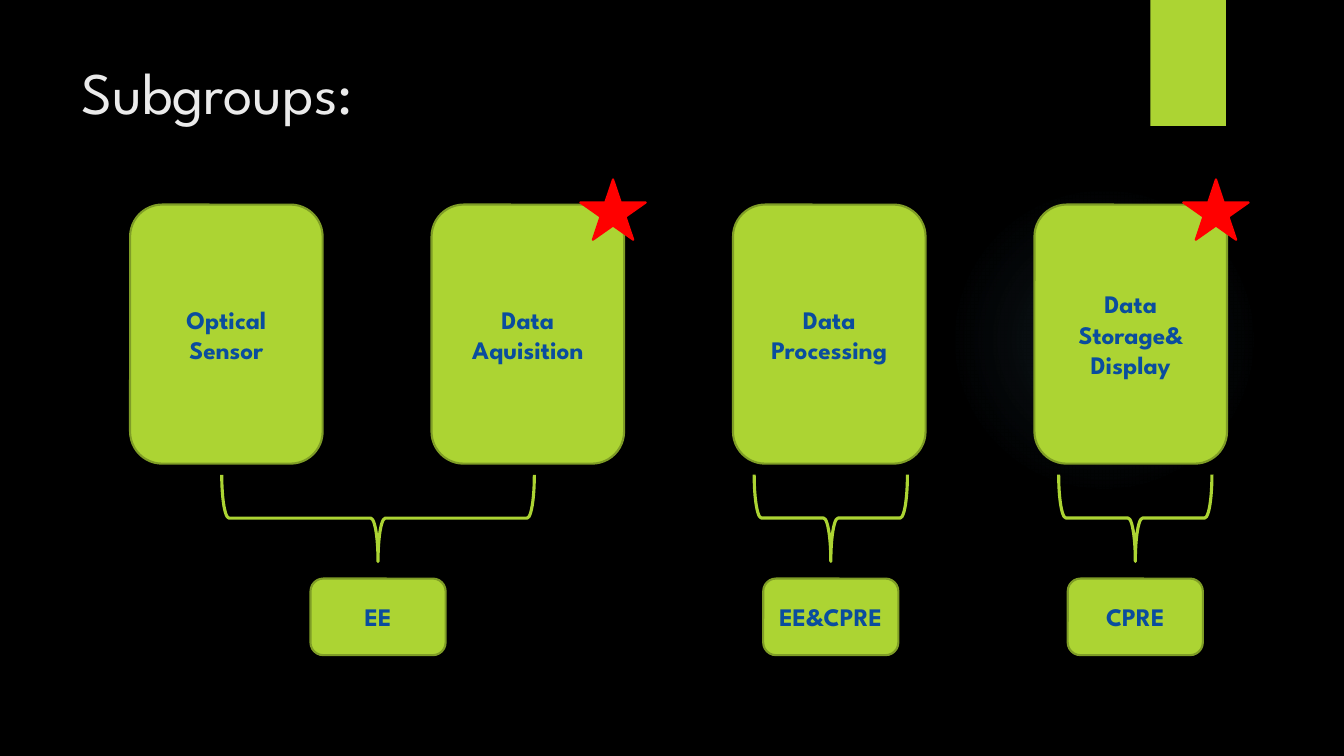
"""Build the slide that shows the project subgroups and their departments."""
from dataclasses import dataclass

from pptx import Presentation
from pptx.dml.color import RGBColor
from pptx.enum.shapes import MSO_SHAPE
from pptx.enum.text import MSO_ANCHOR, PP_ALIGN
from pptx.oxml import parse_xml
from pptx.oxml.ns import nsdecls
from pptx.shapes.autoshape import Shape
from pptx.slide import Slide
from pptx.util import Inches, Pt

RECT, OVAL, ROUNDED = MSO_SHAPE.RECTANGLE, MSO_SHAPE.OVAL, MSO_SHAPE.ROUNDED_RECTANGLE
LEFT_BRACE, RIGHT_BRACE = MSO_SHAPE.LEFT_BRACE, MSO_SHAPE.RIGHT_BRACE
STAR = MSO_SHAPE.STAR_5_POINT
MIDDLE, TOP = MSO_ANCHOR.MIDDLE, MSO_ANCHOR.TOP
CENTER = PP_ALIGN.CENTER

BLACK = RGBColor(0x00, 0x00, 0x00)
LIME = RGBColor(0xAC, 0xD4, 0x33)
OLIVE = RGBColor(0x7F, 0x9D, 0x26)
NAVY = RGBColor(0x0A, 0x4D, 0x9E)
RED = RGBColor(0xFF, 0x00, 0x00)
OFF_WHITE = RGBColor(0xEB, 0xEB, 0xEB)
GLOW_BLUE = RGBColor(0x7A, 0xC4, 0xF0)

FONT = "League Spartan"
TITLE_FONT = {"name": FONT, "size": Pt(42)}
LABEL_FONT = {"name": FONT, "size": Pt(18), "bold": True}
GLOW_STOPS = ((0, 7), (36, 6), (69, 0))

CARD_LEFT, CARD_TOP, CARD_PITCH = 1.29, 2.03, 2.99
CARD_WIDTH, CARD_HEIGHT = 1.91, 2.57
STAR_WIDTH, STAR_HEIGHT, STAR_TOP, STAR_INSET = 0.65, 0.6, 1.78, 0.11
BRACE_DEPTH, BRACE_MIDDLE = 0.86, 5.14
DEPARTMENT_WIDTH, DEPARTMENT_HEIGHT, DEPARTMENT_TOP = 1.34, 0.76, 5.74


@dataclass(frozen=True)
class Subgroup:
    name: str
    starred: bool = False


@dataclass(frozen=True)
class Department:
    name: str
    center: float
    span: float
    brace: MSO_SHAPE = RIGHT_BRACE
    rotation: int = 90


SUBGROUPS = (
    Subgroup("Optical Sensor"),
    Subgroup("Data Aquisition", starred=True),
    Subgroup("Data Processing"),
    Subgroup("Data Storage& Display", starred=True),
)
DEPARTMENTS = (
    Department("EE", 3.75, 3.1, LEFT_BRACE, 270),
    Department("EE&CPRE", 8.24, 1.52),
    Department("CPRE", 11.26, 1.52),
)


def write(box: Shape, text: str, font: dict, color: RGBColor) -> None:
    box.text_frame.word_wrap = True
    paragraph = box.text_frame.paragraphs[0]
    run = paragraph.add_run()
    run.text = text
    for attribute, value in font.items():
        setattr(run.font, attribute, value)
    run.font.color.rgb = color


def add_figure(slide: Slide, kind: MSO_SHAPE, left: float, top: float, width: float,
               height: float, fill: RGBColor | None = None,
               line: RGBColor | None = None, weight: float = 1.5) -> Shape:
    figure = slide.shapes.add_shape(
        kind, Inches(left), Inches(top), Inches(width), Inches(height))
    figure.shadow.inherit = False
    if fill is None:
        figure.fill.background()
    else:
        figure.fill.solid()
        figure.fill.fore_color.rgb = fill
    if line is None:
        figure.line.fill.background()
    else:
        figure.line.color.rgb = line
        figure.line.width = Pt(weight)
    return figure


def add_label(slide: Slide, text: str, left: float, top: float,
              width: float, height: float) -> None:
    label = add_figure(slide, ROUNDED, left, top, width, height, LIME, OLIVE)
    write(label, text, LABEL_FONT, NAVY)
    label.text_frame.vertical_anchor = MIDDLE
    label.text_frame.paragraphs[0].alignment = CENTER


def add_glow(slide: Slide) -> None:
    glow = add_figure(slide, OVAL, 9.41, 1.83, 3.08, 3.08)
    stops = "".join(
        f'<a:gs pos="{place * 1000}"><a:srgbClr val="{GLOW_BLUE}">'
        f'<a:alpha val="{opacity * 1000}"/></a:srgbClr></a:gs>'
        for place, opacity in GLOW_STOPS)
    gradient = parse_xml(
        f'<a:gradFill {nsdecls("a")} rotWithShape="1"><a:gsLst>{stops}</a:gsLst>'
        '<a:path path="circle"><a:fillToRect l="50000" t="50000" r="50000" b="50000"/>'
        '</a:path></a:gradFill>')
    properties = glow.element.spPr
    properties.replace(properties.find("{*}noFill"), gradient)


def add_title(slide: Slide) -> None:
    title = slide.shapes.add_textbox(Inches(0.71), Inches(0.5), Inches(10.29), Inches(1.53))
    write(title, "Subgroups:", TITLE_FONT, OFF_WHITE)
    title.text_frame.vertical_anchor = TOP


def add_department(slide: Slide, department: Department) -> None:
    brace = add_figure(
        slide, department.brace, department.center - BRACE_DEPTH / 2,
        BRACE_MIDDLE - department.span / 2, BRACE_DEPTH, department.span,
        line=LIME, weight=2.25)
    brace.rotation = department.rotation
    add_label(slide, department.name, department.center - DEPARTMENT_WIDTH / 2,
              DEPARTMENT_TOP, DEPARTMENT_WIDTH, DEPARTMENT_HEIGHT)


def main() -> None:
    deck = Presentation()
    deck.slide_width, deck.slide_height = Inches(13.33), Inches(7.5)
    slide = deck.slides.add_slide(deck.slide_layouts[6])
    slide.background.fill.solid()
    slide.background.fill.fore_color.rgb = BLACK

    add_glow(slide)
    add_figure(slide, RECT, 11.41, 0, 0.75, 1.25, LIME)
    add_title(slide)

    card_lefts = [CARD_LEFT + CARD_PITCH * column for column in range(len(SUBGROUPS))]
    for subgroup, left in zip(SUBGROUPS, card_lefts):
        add_label(slide, subgroup.name, left, CARD_TOP, CARD_WIDTH, CARD_HEIGHT)
    for department in DEPARTMENTS:
        add_department(slide, department)
    for subgroup, left in zip(SUBGROUPS, card_lefts):
        if subgroup.starred:
            star_left = left + CARD_WIDTH - STAR_INSET - STAR_WIDTH / 2
            add_figure(slide, STAR, star_left, STAR_TOP, STAR_WIDTH, STAR_HEIGHT, RED, RED)

    deck.save("out.pptx")


if __name__ == "__main__":
    main()
